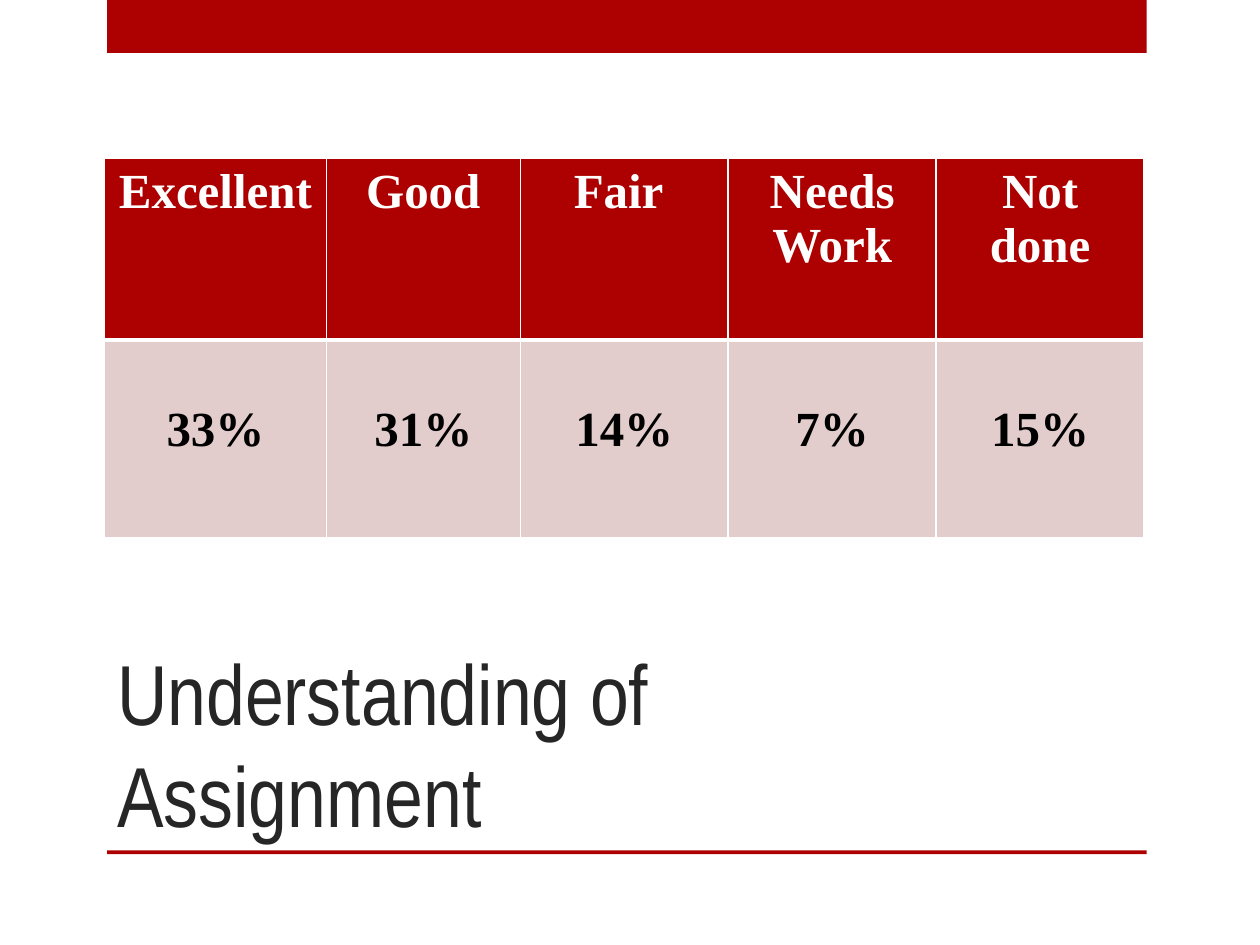
from lxml import etree
from pptx import Presentation, util as u
from pptx.dml.color import RGBColor
from pptx.enum import shapes, text
from pptx.oxml import ns

COLORS = {"red": "AD0101", "pink": "E3CCCC", "white": "FFFFFF", "black": "000000", "title": "262626"}
RATINGS = [("Excellent", "33%"), ("Good", "31%"), ("Fair ", "14%"), ("Needs Work", "7%"), ("Not done", "15%")]
COLUMN_WIDTHS = [1.76, 1.54, 1.65, 1.65, 1.65]
ROW_HEIGHTS = [1.44, 1.57]


class SlideBuilder:
    """Holds the slide and its style, with one method per kind of element."""

    def __init__(self, presentation):
        self.slide = presentation.slides.add_slide(presentation.slide_layouts[5])
        self.title_font = "Arial Narrow"
        self.table_font = "Times New Roman"

    def format_runs(self, paragraph, font, size, color, bold=False):
        for run in paragraph.runs:
            run.font.name = font
            run.font.size = u.Pt(size)
            run.font.bold = bold
            run.font.color.rgb = RGBColor.from_string(COLORS[color])

    def bar(self, top, height):
        shape = self.slide.shapes.add_shape(
            shapes.MSO_SHAPE.RECTANGLE, u.Inches(0.85), u.Inches(top), u.Inches(8.25), u.Inches(height))
        shape.shadow.inherit = False
        shape.fill.solid()
        shape.fill.fore_color.rgb = RGBColor.from_string(COLORS["red"])
        shape.line.fill.background()

    def title(self, wording):
        shape = self.slide.shapes.title
        shape.left, shape.top = u.Inches(0.83), u.Inches(5)
        shape.width, shape.height = u.Inches(7.42), u.Inches(1.75)
        frame = shape.text_frame
        frame.text = wording
        frame.word_wrap = True
        frame.auto_size = text.MSO_AUTO_SIZE.NONE
        frame.vertical_anchor = text.MSO_ANCHOR.BOTTOM
        frame.margin_right = u.Inches(0.2)
        paragraph = frame.paragraphs[0]
        paragraph.alignment = text.PP_ALIGN.LEFT
        self.format_runs(paragraph, self.title_font, 48.6, "title")

    def borders(self, cell, widths):
        properties = cell._tc.get_or_add_tcPr()
        for index, (side, width) in enumerate(widths.items()):
            line = etree.Element(ns.qn(f"a:ln{side}"), w=str(u.Pt(width)))
            fill = etree.SubElement(line, ns.qn("a:solidFill"))
            etree.SubElement(fill, ns.qn("a:srgbClr"), val=COLORS["white"])
            properties.insert(index, line)

    def cell(self, cell, wording, fill, color, top_margin, bottom_border):
        cell.text = wording
        cell.margin_top = u.Inches(top_margin)
        cell.fill.solid()
        cell.fill.fore_color.rgb = RGBColor.from_string(COLORS[fill])
        paragraph = cell.text_frame.paragraphs[0]
        paragraph.alignment = text.PP_ALIGN.CENTER
        self.format_runs(paragraph, self.table_font, 28, color, bold=True)
        top_border = 1 if fill == "red" else 3
        self.borders(cell, {"L": 1, "R": 1, "T": top_border, "B": bottom_border})

    def table(self, ratings):
        table = self.slide.shapes.add_table(
            len(ROW_HEIGHTS), len(ratings), u.Inches(0.83), u.Inches(1.26),
            u.Inches(sum(COLUMN_WIDTHS)), u.Inches(sum(ROW_HEIGHTS))).table
        for row, height in zip(table.rows, ROW_HEIGHTS):
            row.height = u.Inches(height)
        for index, (label, share) in enumerate(ratings):
            table.columns[index].width = u.Inches(COLUMN_WIDTHS[index])
            self.cell(table.cell(0, index), label, "red", "white", 0.05, 3)
            self.cell(table.cell(1, index), share, "pink", "black", 0.5, 1)


def main():
    presentation = Presentation()
    presentation.slide_width = u.Inches(10)
    presentation.slide_height = u.Inches(7.5)
    builder = SlideBuilder(presentation)
    builder.bar(0, 0.42)
    builder.bar(6.75, 0.03)
    builder.title("Understanding of Assignment")
    builder.table(RATINGS)
    presentation.save("out.pptx")


if __name__ == "__main__":
    main()
